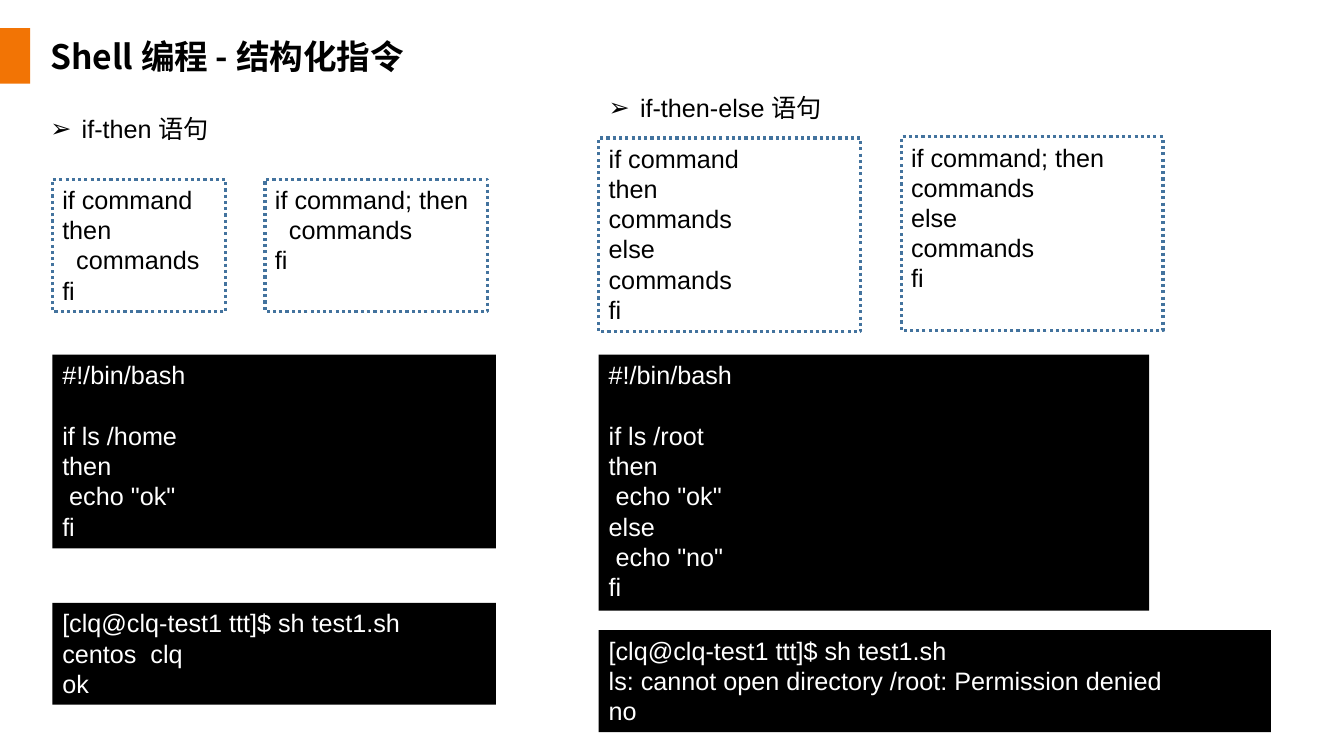
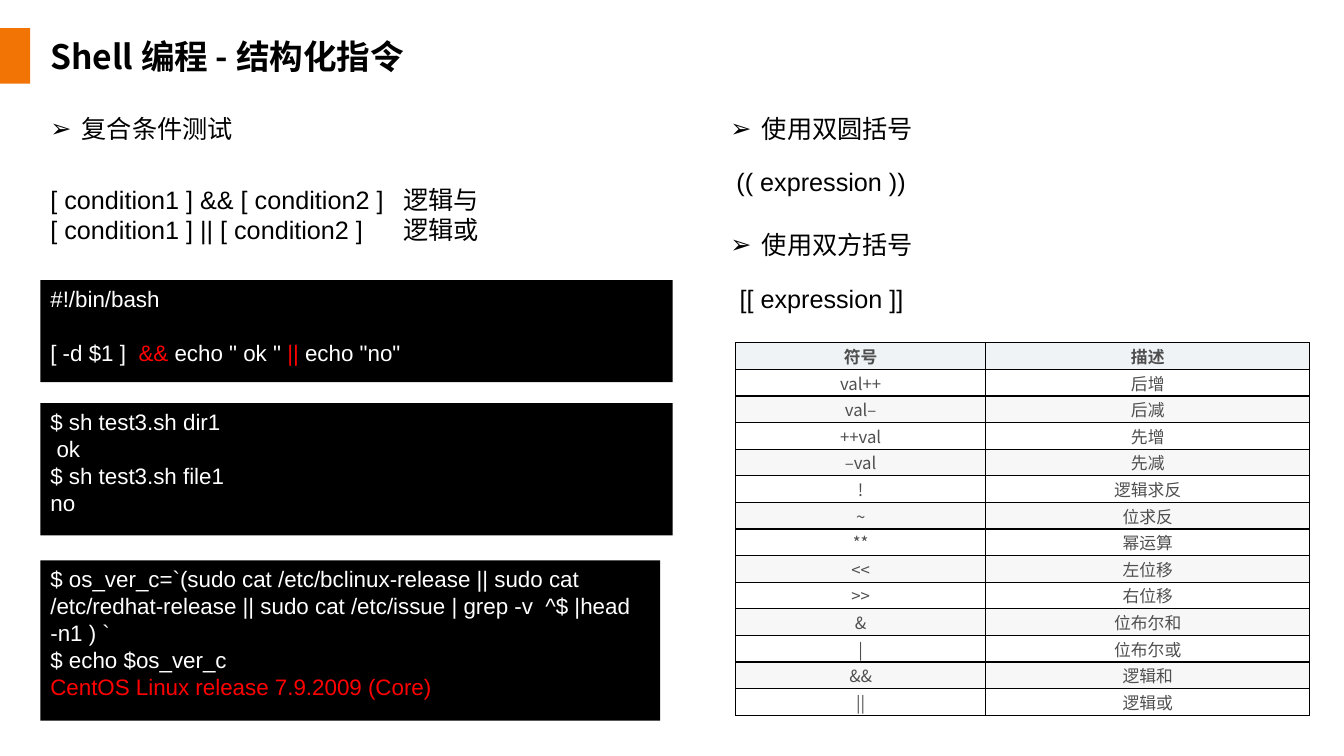
from dataclasses import dataclass
from typing import NamedTuple

from lxml import etree
from pptx import Presentation
from pptx.dml import color as col
from pptx.enum import dml, shapes, text
from pptx.oxml import ns
from pptx.util import Cm, Pt

COLORS = {
    "accent": "F27405", "black": "000000", "white": "FFFFFF", "red": "FF0000",
    "dotted": "43739E", "cell": "4F4F4F", "header": "EFF3F5", "band": "F7F7F7",
}
LATIN, CJK = "Arial", "Noto Sans CJK SC"
TITLE = "Shell 编程 - 结构化指令"
LINE_RATIO = 1.2
ROW_H = 0.67


class Span(NamedTuple):
    text: str
    color: str


Line = str | tuple[Span, ...]


@dataclass
class Block:
    """A text area in centimetres: plain, bulleted, dotted outline or black code panel."""
    x: float
    y: float
    w: float
    h: float
    lines: list[Line]
    kind: str = "plain"
    size: int = 18
    tab: float = 0


def rgb(name: str) -> col.RGBColor:
    return col.RGBColor.from_string(COLORS[name])


def sub(parent, tag: str, **attrs):
    e = etree.SubElement(parent, ns.qn(tag))
    for key, value in attrs.items():
        e.set(key, str(value))
    return e


def add_run(p, content: str, *, size: int = 18, color: str = "black",
            font: str = LATIN, bold: bool = False) -> None:
    r = p.add_run()
    r.text = content
    r.font.size = Pt(size)
    r.font.bold = bold
    r.font.name = font
    r.font.color.rgb = rgb(color)
    sub(r.font._element, "a:ea", typeface=CJK)


def write(tf, lines: list[Line], *, bullet: bool = False, tab: float = 0,
          size: int = 18, color: str = "black", **fmt) -> None:
    """Fill a text frame; an empty line becomes space before the next one."""
    p, gap = None, 0
    for line in lines:
        if not line:
            gap += size * LINE_RATIO
            continue
        p = tf.paragraphs[0] if p is None else tf.add_paragraph()
        if gap:
            p.space_before, gap = Pt(gap), 0
        pPr = p._p.get_or_add_pPr()
        if bullet:
            pPr.set("marL", str(Cm(0.79)))
            pPr.set("indent", str(-Cm(0.79)))
            sub(pPr, "a:buFont", typeface=LATIN)
            sub(pPr, "a:buChar", char="➢")
        if tab:
            sub(sub(pPr, "a:tabLst"), "a:tab", pos=Cm(tab), algn="l")
        spans = (Span(line, color),) if isinstance(line, str) else line
        for span in spans:
            add_run(p, span.text, size=size, color=span.color, **fmt)


def add_rect(s, x: float, y: float, w: float, h: float, fill: str | None = None):
    sp = s.shapes.add_shape(shapes.MSO_SHAPE.RECTANGLE, Cm(x), Cm(y), Cm(w), Cm(h))
    sp.shadow.inherit = False
    sp.line.fill.background()
    if fill:
        sp.fill.solid()
        sp.fill.fore_color.rgb = rgb(fill)
    else:
        sp.fill.background()
    return sp


def add_block(s, b: Block) -> None:
    if b.kind in ("code", "dotted"):
        sp = add_rect(s, b.x, b.y, b.w, b.h, "black" if b.kind == "code" else None)
        if b.kind == "dotted":
            sp.line.color.rgb = rgb("dotted")
            sp.line.width = Pt(2.25)
            sp.line.dash_style = dml.MSO_LINE.ROUND_DOT
    else:
        sp = s.shapes.add_textbox(Cm(b.x), Cm(b.y), Cm(b.w), Cm(b.h))
    tf = sp.text_frame
    tf.word_wrap = True
    tf.vertical_anchor = text.MSO_ANCHOR.TOP
    write(tf, b.lines, bullet=b.kind == "bullet", tab=b.tab, size=b.size,
          color="white" if b.kind == "code" else "black")
    for p in tf.paragraphs:
        p.alignment = text.PP_ALIGN.LEFT


def add_slide(prs, blocks: list[Block]):
    """Add a slide with the accent bar, the shared title and its blocks."""
    s = prs.slides.add_slide(prs.slide_layouts[6])
    add_rect(s, 0, 0.71, 0.76, 1.4, "accent")
    tf = s.shapes.add_textbox(Cm(1.02), Cm(0.76), Cm(29.21), Cm(1.45)).text_frame
    tf.word_wrap = True
    tf.vertical_anchor = text.MSO_ANCHOR.MIDDLE
    write(tf, [TITLE], size=24, font=CJK, bold=True)
    tf.paragraphs[0].line_spacing = 0.9
    for b in blocks:
        add_block(s, b)
    return s


def format_cell(cell, content: str, fill: str, bold: bool) -> None:
    tcPr = cell._tc.get_or_add_tcPr()
    for side in ("a:lnL", "a:lnR", "a:lnT", "a:lnB"):
        ln = sub(tcPr, side, w=Pt(1))
        sub(sub(ln, "a:solidFill"), "a:srgbClr", val=COLORS["black"])
    cell.fill.solid()
    cell.fill.fore_color.rgb = rgb(fill)
    cell.margin_left = cell.margin_right = cell.margin_top = Cm(0.03)
    cell.margin_bottom = Cm(0.13)
    cell.vertical_anchor = text.MSO_ANCHOR.MIDDLE
    write(cell.text_frame, [content], size=12, color="cell", font=CJK, bold=bold)
    cell.text_frame.paragraphs[0].alignment = text.PP_ALIGN.CENTER


def add_grid(s, x: float, y: float, widths: list[float], rows: list[tuple[str, str]]) -> None:
    table = s.shapes.add_table(len(rows), len(widths), Cm(x), Cm(y),
                               Cm(sum(widths)), Cm(ROW_H * len(rows))).table
    table.first_row = table.horz_banding = False
    for column, width in zip(table.columns, widths):
        column.width = Cm(width)
    for i, row in enumerate(rows):
        table.rows[i].height = Cm(ROW_H)
        fill = "header" if i == 0 else "white" if i % 2 else "band"
        for j, content in enumerate(row):
            format_cell(table.cell(i, j), content, fill, bold=i == 0)


IF_BLOCKS = [
    Block(1.02, 2.74, 11.28, 1.02, ["if-then 语句"], "bullet"),
    Block(1.32, 4.52, 4.37, 3.33, ["if command", "then", "  commands", "fi"], "dotted"),
    Block(6.68, 4.52, 5.61, 3.33, ["if command; then", "  commands", "fi"], "dotted"),
    Block(1.32, 8.94, 11.18, 4.88,
          ["#!/bin/bash", "", "if ls /home", "then", ' echo "ok"', "fi"], "code"),
    Block(1.32, 15.19, 11.18, 2.57,
          ["[clq@clq-test1 ttt]$ sh test1.sh", "centos  clq", "ok"], "code"),
    Block(15.09, 2.21, 15.14, 1.02, ["if-then-else 语句"], "bullet"),
    Block(15.09, 3.48, 6.6, 4.88,
          ["if command", "then", "commands", "else", "commands", "fi"], "dotted"),
    Block(22.71, 3.45, 6.6, 4.88,
          ["if command; then", "commands", "else", "commands", "fi"], "dotted"),
    Block(15.09, 8.94, 13.87, 6.45,
          ["#!/bin/bash", "", "if ls /root", "then", ' echo "ok"', "else",
           ' echo "no"', "fi"], "code"),
    Block(15.09, 15.88, 16.94, 2.57,
          ["[clq@clq-test1 ttt]$ sh test1.sh",
           "ls: cannot open directory /root: Permission denied", "no"], "code"),
]

TEST_BLOCKS = [
    Block(1.02, 2.74, 11.28, 1.02, ["复合条件测试"], "bullet"),
    Block(1.02, 4.52, 16.94, 1.8,
          ["[ condition1 ] && [ condition2 ]\t逻辑与",
           "[ condition1 ] || [ condition2 ]\t逻辑或"], tab=8.89),
    Block(1.02, 7.06, 15.93, 2.57,
          ["#!/bin/bash", "",
           (Span("[ -d $1 ]  ", "white"), Span("&&", "red"), Span(' echo " ok " ', "white"),
            Span("||", "red"), Span(' echo "no"', "white"))], "code", 16),
    Block(1.02, 10.16, 15.93, 3.33,
          ["$ sh test3.sh dir1", " ok", "$ sh test3.sh file1", "no"], "code", 16),
    Block(1.02, 14.12, 15.62, 4.04,
          ["$ os_ver_c=`(sudo cat /etc/bclinux-release || sudo cat /etc/redhat-release"
           " || sudo cat /etc/issue | grep -v  ^$ |head -n1 ) `",
           "$ echo $os_ver_c",
           (Span("CentOS Linux release 7.9.2009 (Core)", "red"),)], "code", 16),
    Block(18.16, 2.74, 12.8, 1.02, ["使用双圆括号"], "bullet"),
    Block(18.31, 4.06, 12.47, 1.02, ["(( expression ))"]),
    Block(18.16, 5.66, 12.8, 1.02, ["使用双方括号"], "bullet"),
    Block(18.39, 7.01, 12.47, 1.02, ["[[ expression ]]"]),
]

OPERATORS = [
    ("符号", "描述"), ("val++", "后增"), ("val–", "后减"), ("++val", "先增"),
    ("–val", "先减"), ("!", "逻辑求反"), ("~", "位求反"), ("**", "幂运算"),
    ("<<", "左位移"), (">>", "右位移"), ("&", "位布尔和"), ("|", "位布尔或"),
    ("&&", "逻辑和"), ("||", "逻辑或"),
]


def main() -> None:
    prs = Presentation()
    prs.slide_width, prs.slide_height = Cm(33.87), Cm(19.05)
    add_slide(prs, IF_BLOCKS)
    s = add_slide(prs, TEST_BLOCKS)
    add_grid(s, 18.54, 8.64, [6.3, 8.17], OPERATORS)
    prs.save("out.pptx")


if __name__ == "__main__":
    main()
